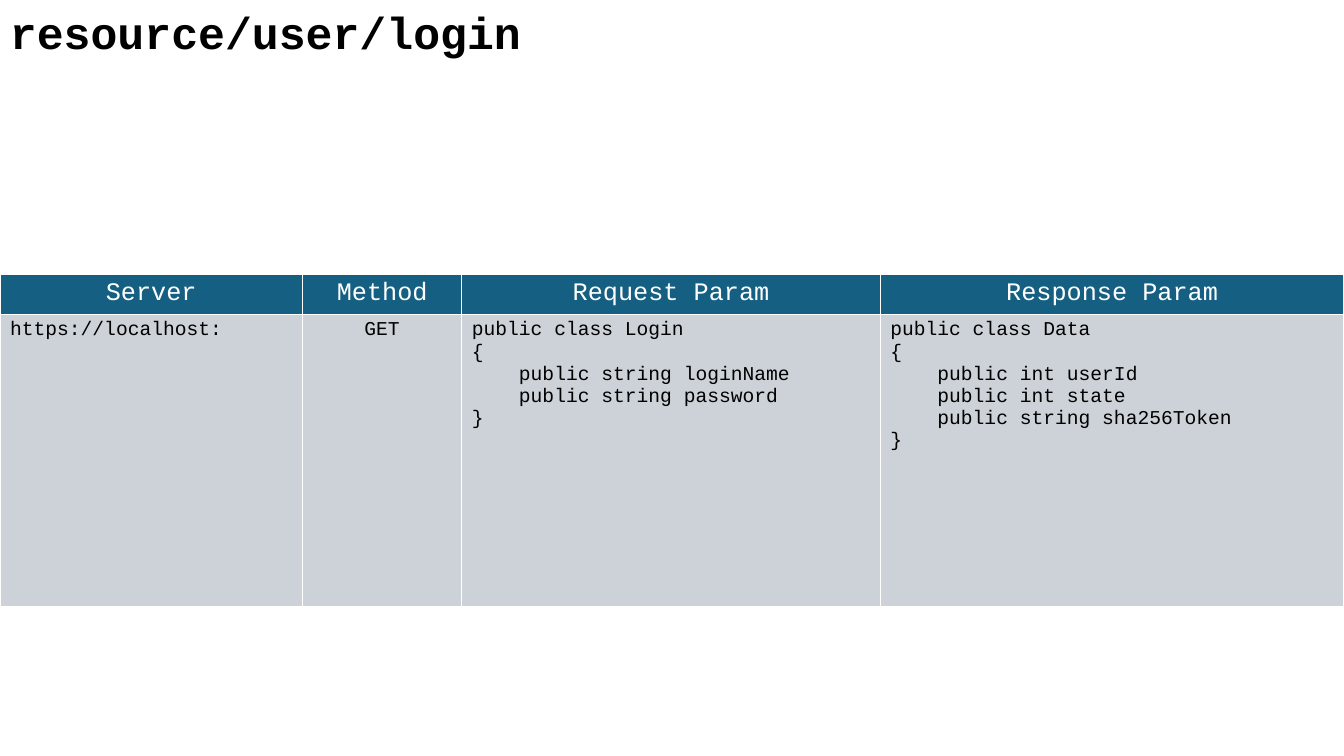
from lxml.etree import SubElement
from pptx import Presentation
from pptx.dml.color import RGBColor
from pptx.enum.text import MSO_AUTO_SIZE as AutoSize, PP_ALIGN as Align
from pptx.oxml.ns import qn
from pptx.util import Inches, Pt

FONT = "Courier New"
WHITE = "FFFFFF"
BLACK = "000000"
HEADER_FILL = "156082"
BODY_FILL = "CCD2D8"
COLUMN_WIDTHS = [3, 1.58, 4.15, 4.6]
HEADER_HEIGHT = 0.4
HEADERS = ["Server", "Method", "Request Param", "Response Param"]
ENDPOINT = [
    "https://localhost:",
    "GET",
    """public class Login
{
    public string loginName
    public string password
}""",
    """public class Data
{
    public int userId
    public int state
    public string sha256Token
}""",
]


def rgb(value):
    return RGBColor.from_string(value)


def write_text(frame, text, size, color, bold=False, align=Align.LEFT):
    for index, line in enumerate(text.split("\n")):
        paragraph = frame.add_paragraph() if index else frame.paragraphs[0]
        paragraph.alignment = align
        run = paragraph.add_run()
        run.text = line
        run.font.name = FONT
        run.font.size = Pt(size)
        run.font.bold = bold
        run.font.color.rgb = rgb(color)


def style_cell(cell, fill):
    properties = cell._tc.get_or_add_tcPr()
    for side in ("lnL", "lnR", "lnT", "lnB"):
        line = SubElement(properties, qn(f"a:{side}"), w=str(Pt(1)))
        solid = SubElement(line, qn("a:solidFill"))
        SubElement(solid, qn("a:srgbClr"), val=WHITE)
    cell.fill.solid()
    cell.fill.fore_color.rgb = rgb(fill)


def add_title(slide, left, top, width, height):
    box = slide.shapes.add_textbox(
        Inches(left), Inches(top), Inches(width), Inches(height))
    frame = box.text_frame
    frame.word_wrap = True
    frame.auto_size = AutoSize.SHAPE_TO_FIT_TEXT
    write_text(frame, "resource/user/login", 32, BLACK, bold=True)


def add_endpoint_table(slide, left, top, width, height):
    table = slide.shapes.add_table(
        2, len(HEADERS), Inches(left), Inches(top), Inches(width), Inches(height)).table
    table.rows[0].height = Inches(HEADER_HEIGHT)
    table.rows[1].height = Inches(height - HEADER_HEIGHT)
    for index, column_width in enumerate(COLUMN_WIDTHS):
        table.columns[index].width = Inches(column_width * width / sum(COLUMN_WIDTHS))
        header, body = table.cell(0, index), table.cell(1, index)
        style_cell(header, HEADER_FILL)
        style_cell(body, BODY_FILL)
        write_text(header.text_frame, HEADERS[index], 18, WHITE, align=Align.CENTER)
        body_align = Align.CENTER if HEADERS[index] == "Method" else Align.LEFT
        write_text(body.text_frame, ENDPOINT[index], 14, BLACK, align=body_align)


def main():
    presentation = Presentation()
    presentation.slide_width = Inches(13.33)
    presentation.slide_height = Inches(7.5)
    slide = presentation.slides.add_slide(presentation.slide_layouts[6])
    add_title(slide, 0, 0, 9.45, 0.64)
    add_endpoint_table(slide, 0, 2.72, 13.33, 3.3)
    presentation.save("out.pptx")


if __name__ == "__main__":
    main()
